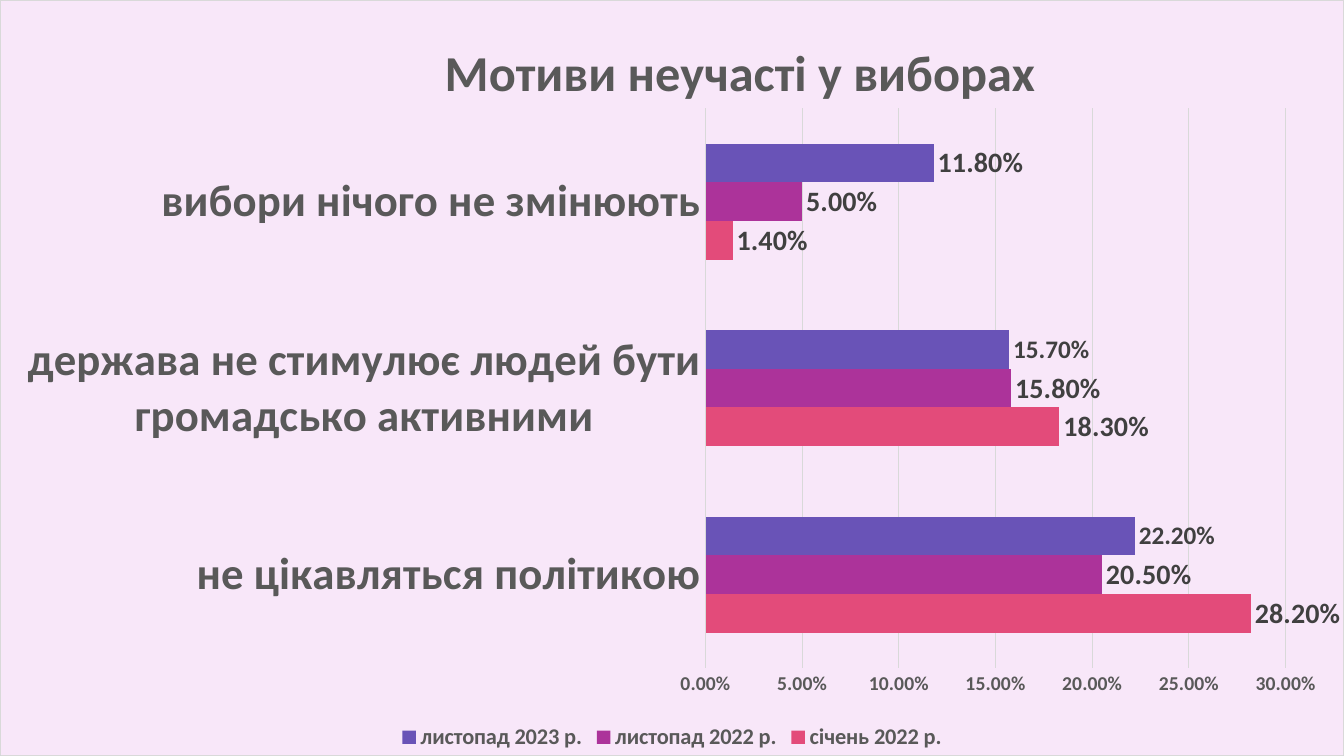
from lxml.etree import SubElement as Sub
from pptx import Presentation
from pptx.chart.data import CategoryChartData as ChartData
from pptx.dml.color import RGBColor as RGB
from pptx.enum.chart import (XL_CHART_TYPE as Kind, XL_LABEL_POSITION as LabelPos,
                             XL_LEGEND_POSITION as LegendPos, XL_TICK_MARK as Tick)
from pptx.oxml import parse_xml
from pptx.oxml.ns import nsdecls, qn
from pptx.util import Inches, Pt

COLORS = {"sky_top": "E9C8EF", "sky_bottom": "89AEDB", "panel": "F8E7F9",
          "grid": "D9D9D9", "text": "595959", "label": "404040"}
CATEGORIES = ["не цікавляться політикою",
              "держава не стимулює людей бути громадсько активними",
              "вибори нічого не змінюють"]
SERIES = [("січень 2022 р.", (0.282, 0.183, 0.014), "E34B7A", 20),
          ("листопад 2022 р.", (0.205, 0.158, 0.05), "AC339A", 20),
          ("листопад 2023 р.", (0.222, 0.157, 0.118), "6953B7", 18)]
PERCENT = "0.00%"
PLOT_AREA = {"x": 0.525, "y": 0.143, "w": 0.432, "h": 0.741}
TITLE_AREA = {"x": 0.324, "y": 0.037}


def set_all(obj, values):
    """Set each named attribute of an object."""
    for name, value in values.items():
        setattr(obj, name, value)


def style_font(font, size, color="text"):
    """Apply the bold slide font in a size and colour."""
    set_all(font, {"name": "Calibri", "size": Pt(size), "bold": True})
    font.color.rgb = RGB.from_string(COLORS[color])


def style_line(line):
    """Draw a thin grey line."""
    line.width = Pt(0.75)
    line.color.rgb = RGB.from_string(COLORS["grid"])


def place(parent, index, shares):
    """Give a chart part a manual layout in shares of the chart."""
    for old in parent.findall(qn("c:layout")):
        parent.remove(old)
    layout = parse_xml(f"<c:layout {nsdecls('c')}><c:manualLayout/></c:layout>")
    manual = layout[0]
    if "w" in shares:
        Sub(manual, qn("c:layoutTarget"), val="inner")
    for axis in "xy":
        Sub(manual, qn(f"c:{axis}Mode"), val="edge")
    for key, share in shares.items():
        Sub(manual, qn(f"c:{key}"), val=str(share))
    parent.insert(index, layout)


def fill_panel(chart):
    """Fill and outline the chart area."""
    chart.element.find(qn("c:chart")).addnext(parse_xml(
        f'<c:spPr {nsdecls("c", "a")}>'
        f'<a:solidFill><a:srgbClr val="{COLORS["panel"]}"/></a:solidFill>'
        f'<a:ln w="{Pt(0.75)}"><a:solidFill><a:srgbClr val="{COLORS["grid"]}"/>'
        '</a:solidFill></a:ln></c:spPr>'))


def add_background(s):
    """Give the slide its vertical gradient."""
    fill = s.background.fill
    fill.gradient()
    fill.gradient_angle = 270
    for stop, name in zip(fill.gradient_stops, ("sky_top", "sky_bottom")):
        stop.color.rgb = RGB.from_string(COLORS[name])


def add_title(chart, text):
    """Write the chart title."""
    chart.has_title = True
    p = chart.chart_title.text_frame.paragraphs[0]
    r = p.add_run()
    r.text = text
    style_font(r.font, 36)
    place(chart.element.find(".//" + qn("c:title")), 1, TITLE_AREA)


def style_axes(chart):
    """Format the category and value axes."""
    cat, val = chart.category_axis, chart.value_axis
    for axis, size in ((cat, 32), (val, 14)):
        set_all(axis, {"major_tick_mark": Tick.NONE, "minor_tick_mark": Tick.NONE})
        style_font(axis.tick_labels.font, size)
    style_line(cat.format.line)
    set_all(val, {"minimum_scale": 0, "maximum_scale": 0.3, "major_unit": 0.05,
                  "has_major_gridlines": True})
    set_all(val.tick_labels, {"number_format": PERCENT, "number_format_is_linked": False})
    val.format.line.fill.background()
    style_line(val.major_gridlines.format.line)


def style_series(series, color, size):
    """Colour a series and label its bars."""
    series.format.fill.solid()
    series.format.fill.fore_color.rgb = RGB.from_string(color)
    labels = series.data_labels
    set_all(labels, {"show_value": True, "number_format": PERCENT,
                     "number_format_is_linked": False, "position": LabelPos.OUTSIDE_END})
    style_font(labels.font, size, "label")


def add_legend(chart):
    """Put the legend below the bars."""
    chart.has_legend = True
    set_all(chart.legend, {"position": LegendPos.BOTTOM, "include_in_layout": False})
    style_font(chart.legend.font, 16)


def add_bars(s, width, height):
    """Add the bar chart across the whole slide."""
    data = ChartData(number_format=PERCENT)
    data.categories = CATEGORIES
    for name, values, _, _ in SERIES:
        data.add_series(name, values)
    chart = s.shapes.add_chart(Kind.BAR_CLUSTERED, 0, 0, width, height, data).chart
    set_all(chart.font, {"name": "Calibri", "size": Pt(10)})
    set_all(chart.plots[0], {"gap_width": 182, "overlap": 0, "vary_by_categories": False})
    for series, (_, _, color, size) in zip(chart.plots[0].series, SERIES):
        style_series(series, color, size)
    top_label = chart.plots[0].series[-1].points[2].data_label
    style_font(top_label.font, 20, "label")
    top_label.position = LabelPos.OUTSIDE_END
    add_title(chart, "Мотиви неучасті у виборах")
    style_axes(chart)
    add_legend(chart)
    place(chart.element.find(".//" + qn("c:plotArea")), 0, PLOT_AREA)
    fill_panel(chart)


def main():
    """Build and save the slide."""
    prs = Presentation()
    set_all(prs, {"slide_width": Inches(13.33), "slide_height": Inches(7.5)})
    s = prs.slides.add_slide(prs.slide_layouts[6])
    add_background(s)
    add_bars(s, prs.slide_width, prs.slide_height)
    prs.save("out.pptx")


if __name__ == "__main__":
    main()
